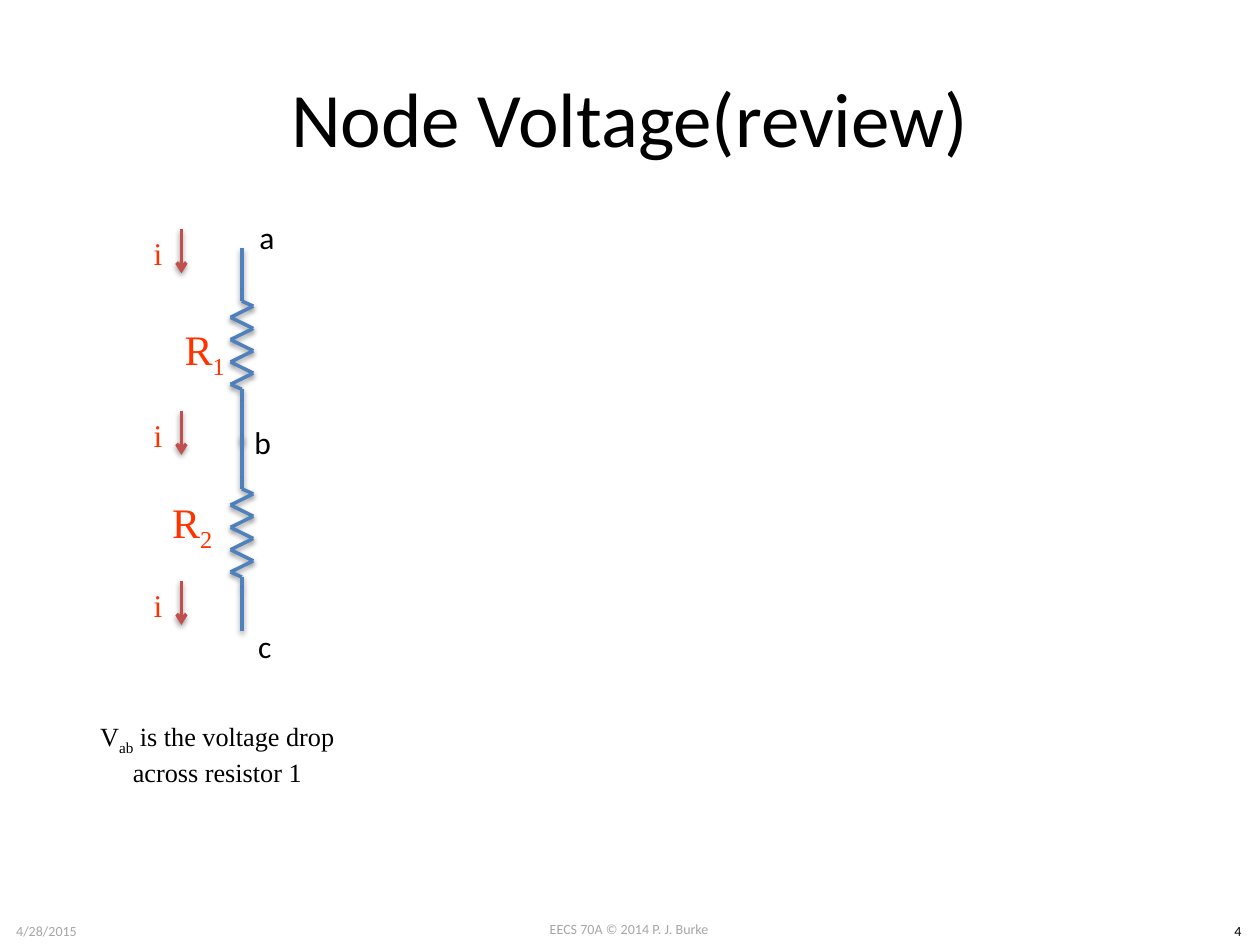
from dataclasses import dataclass
from itertools import pairwise

from lxml.etree import SubElement
from pptx import Presentation
from pptx.dml.color import RGBColor
from pptx.enum.shapes import MSO_CONNECTOR
from pptx.enum.text import MSO_ANCHOR, MSO_AUTO_SIZE, PP_ALIGN
from pptx.oxml.ns import qn
from pptx.util import Inches, Pt


@dataclass(frozen=True)
class Theme:
    sans: str = "Calibri"
    serif: str = "Times New Roman"
    black: str = "000000"
    grey: str = "A6A6A6"
    label: str = "FF3300"
    wire: str = "4F81BD"
    current: str = "C0504D"
    title_size: int = 44
    resistor_size: int = 24
    node_size: int = 18
    note_size: int = 15
    footer_size: int = 8
    line_width: int = 2


class CircuitSlide:
    def __init__(self, deck, theme):
        self.theme = theme
        self.slide = deck.slides.add_slide(deck.slide_layouts[6])

    def text(self, box, runs, size, color, font, align=PP_ALIGN.CENTER,
             anchor=MSO_ANCHOR.MIDDLE, wrap=True, grow=False):
        """Add a text box; runs are (wording, is_subscript) pairs."""
        frame = self.slide.shapes.add_textbox(*map(Inches, box)).text_frame
        frame.word_wrap = wrap
        frame.vertical_anchor = anchor
        frame.auto_size = (MSO_AUTO_SIZE.SHAPE_TO_FIT_TEXT if grow
                           else MSO_AUTO_SIZE.NONE)
        paragraph = frame.paragraphs[0]
        paragraph.alignment = align
        for wording, is_subscript in runs:
            run = paragraph.add_run()
            run.text = wording
            run.font.name = font
            run.font.size = Pt(size)
            run.font.color.rgb = RGBColor.from_string(color)
            if is_subscript:
                run.font._element.set("baseline", "-25000")

    def title(self, wording):
        self.text((0.5, 0.3, 9, 1.25), [(wording, False)],
                  self.theme.title_size, self.theme.black, self.theme.sans)

    def footer(self, box, wording, color):
        self.text(box, [(wording, False)], self.theme.footer_size, color,
                  self.theme.sans, anchor=MSO_ANCHOR.TOP, grow=True)

    def node(self, left, top, name):
        self.text((left, top, 0.33, 0.4), [(name, False)],
                  self.theme.node_size, self.theme.black, self.theme.sans,
                  PP_ALIGN.LEFT, MSO_ANCHOR.TOP, wrap=False, grow=True)

    def line(self, start, end, color, arrow=False):
        connector = self.slide.shapes.add_connector(
            MSO_CONNECTOR.STRAIGHT, *map(Inches, (*start, *end)))
        connector.line.color.rgb = RGBColor.from_string(color)
        connector.line.width = Pt(self.theme.line_width)
        if arrow:
            SubElement(connector.line._get_or_add_ln(), qn("a:tailEnd"),
                       type="arrow")
        # Soft shadow straight below the line
        effects = SubElement(connector._element.spPr, qn("a:effectLst"))
        shadow = SubElement(effects, qn("a:outerShdw"), blurRad=str(Pt(3.1)),
                            dist=str(Pt(1.6)), dir="5400000",
                            rotWithShape="0")
        tint = SubElement(shadow, qn("a:srgbClr"), val=self.theme.black)
        SubElement(tint, qn("a:alpha"), val="38000")

    def resistor(self, x, top):
        """Draw a vertical resistor: two-part leads around eight zigzag peaks."""
        swing, first_peak, last_peak, peaks = 0.09, 0.46, 1.08, 8
        step = (last_peak - first_peak) / (peaks - 1)
        zigzag = [(x + (swing if i % 2 == 0 else -swing),
                   top + first_peak + i * step) for i in range(peaks)]
        upper_lead = [(x, top + y) for y in (0, 0.33, 0.42)]
        lower_lead = [(x, top + y) for y in (1.12, 1.21, 1.55)]
        for start, end in pairwise(upper_lead + zigzag + lower_lead):
            self.line(start, end, self.theme.wire)

    def resistor_name(self, left, top, number):
        self.text((left, top, 1.19, 0.73), [("R", False), (number, True)],
                  self.theme.resistor_size, self.theme.label,
                  self.theme.serif)

    def current(self, top):
        """Draw a downward current arrow with its label."""
        self.text((0.79, top - 0.07, 0.93, 0.52), [("i", False)],
                  self.theme.node_size, self.theme.label, self.theme.serif)
        self.line((1.44, top), (1.44, top + 0.35), self.theme.current,
                  arrow=True)

    def note(self, box, runs):
        self.text(box, runs, self.theme.note_size, self.theme.black,
                  self.theme.serif)


def main():
    deck = Presentation()
    deck.slide_width, deck.slide_height = Inches(10), Inches(7.5)
    theme = Theme()
    page = CircuitSlide(deck, theme)

    # Footer and title
    page.footer((3.83, 7.26, 2.33, 0.24), "EECS 70A © 2014 P. J. Burke",
                theme.grey)
    page.footer((0, 7.27, 0.74, 0.24), "4/28/2015", theme.grey)
    page.footer((9.65, 7.27, 0.35, 0.24), "4", theme.black)
    page.title("Node Voltage(review)")

    # Two resistors in series
    for resistor_top in (1.97, 3.46):
        page.resistor(1.92, resistor_top)
    page.resistor_name(1.03, 2.43, "1")
    page.resistor_name(0.93, 3.8, "2")

    # Nodes
    for left, top, name in ((1.96, 1.68, "a"), (1.92, 3.31, "b"),
                            (1.95, 4.93, "c")):
        page.node(left, top, name)

    # The same current at each node
    for arrow_top in (1.82, 3.26, 4.61):
        page.current(arrow_top)

    # Explanation
    page.note((0.63, 5.62, 2.19, 0.73),
              [("V", False), ("ab", True),
               (" is the voltage drop across resistor 1", False)])

    deck.save("out.pptx")


if __name__ == "__main__":
    main()
